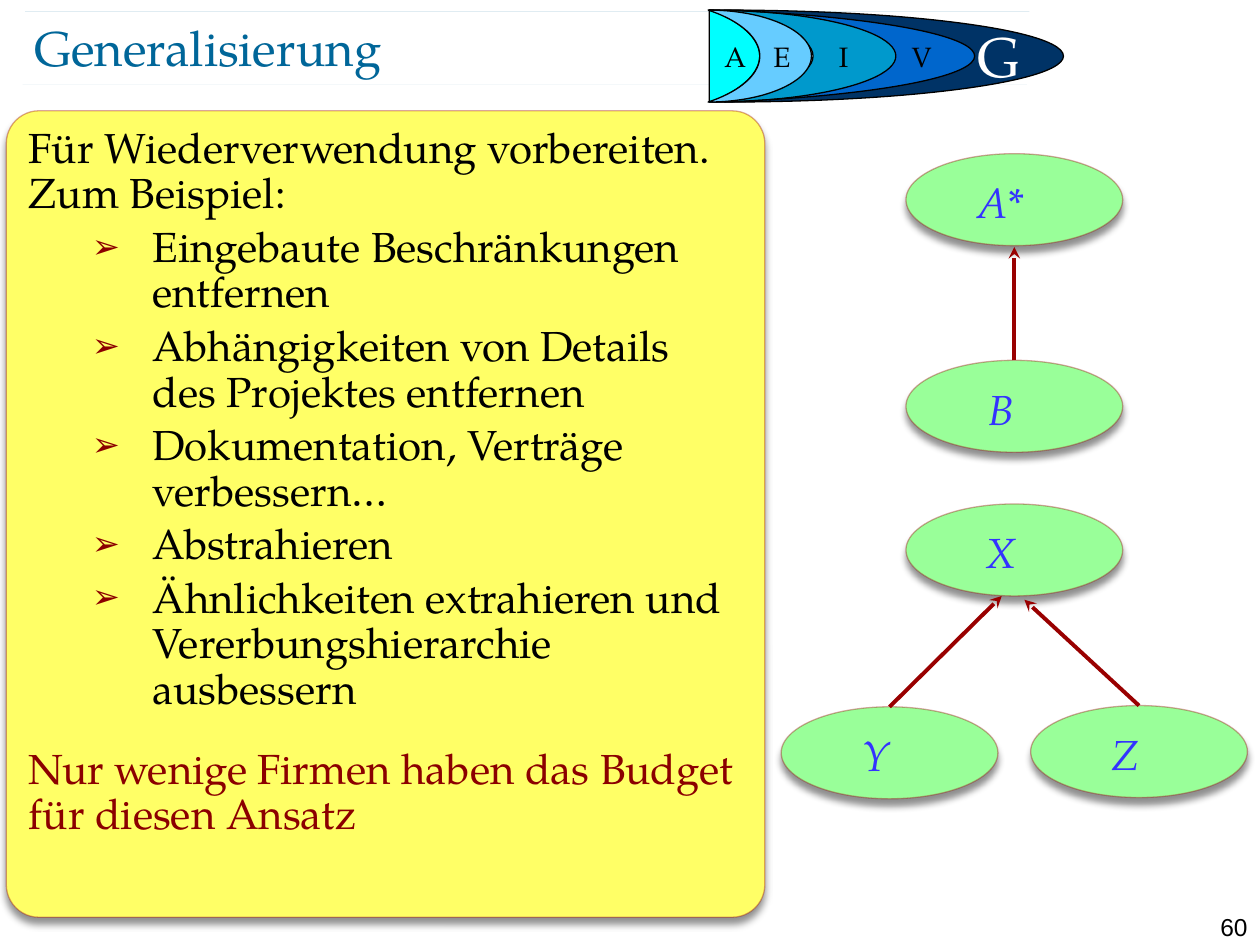
from lxml.etree import SubElement
from pptx import Presentation
from pptx.dml.color import RGBColor
from pptx.enum.shapes import MSO_CONNECTOR, MSO_SHAPE
from pptx.enum.text import MSO_ANCHOR, MSO_AUTO_SIZE, PP_ALIGN
from pptx.oxml.ns import qn
from pptx.util import Inches, Pt

TEAL = RGBColor(0x00, 0x66, 0x99)
RED = RGBColor(0x99, 0x00, 0x00)
DARK_RED = RGBColor(0x8B, 0x00, 0x00)
YELLOW = RGBColor(0xFF, 0xFF, 0x66)
GREEN = RGBColor(0x99, 0xFF, 0x99)
VIOLET = RGBColor(0x33, 0x33, 0xFF)
BLACK = RGBColor(0x00, 0x00, 0x00)
WHITE = RGBColor(0xFF, 0xFF, 0xFF)
CYAN = RGBColor(0x00, 0xFF, 0xFF)
SKY = RGBColor(0x66, 0xCC, 0xFF)
AZURE = RGBColor(0x00, 0x99, 0xCC)
BLUE = RGBColor(0x00, 0x66, 0xCC)
NAVY = RGBColor(0x00, 0x33, 0x66)

ITEMS = [
    "Eingebaute Beschränkungen entfernen",
    "Abhängigkeiten von Details des Projektes entfernen",
    "Dokumentation, Verträge verbessern…",
    "Abstrahieren",
    "Ähnlichkeiten extrahieren und Vererbungshierarchie ausbessern",
]


def add_xml(parent, tag, **attrs):
    return SubElement(parent, qn(tag), {k: str(v) for k, v in attrs.items()})


class SlideBuilder:
    font = "TeX Gyre Pagella"

    def __init__(self, slide):
        self.s = slide

    def add_text(self, p, text, color=BLACK, **fmt):
        r = p.add_run()
        r.text = text
        for name, value in {"name": self.font, **fmt}.items():
            setattr(r.font, name, value)
        r.font.color.rgb = color

    def frame(self, sp, **fmt):
        tf = sp.text_frame
        defaults = {"word_wrap": True, "auto_size": MSO_AUTO_SIZE.NONE,
                    "margin_left": 0, "margin_right": 0,
                    "margin_top": 0, "margin_bottom": 0,
                    "vertical_anchor": MSO_ANCHOR.MIDDLE}
        for name, value in {**defaults, **fmt}.items():
            setattr(tf, name, value)
        return tf

    def place(self, sp, x, y, w, h):
        box = {"left": x, "top": y, "width": w, "height": h}
        for name, value in box.items():
            setattr(sp, name, Inches(value))

    def label(self, text, x, y, w, h, color=BLACK, align=PP_ALIGN.CENTER,
              frame=None, **fmt):
        sp = self.s.shapes.add_textbox(Inches(x), Inches(y), Inches(w), Inches(h))
        p = self.frame(sp, **(frame or {})).paragraphs[0]
        p.alignment = align
        self.add_text(p, text, color, **fmt)

    def paint(self, sp, fill, line=BLACK):
        sp.shadow.inherit = False
        sp.fill.solid()
        sp.fill.fore_color.rgb = fill
        sp.line.color.rgb = line
        sp.line.width = Pt(0.75)

    def fade_line(self, sp, percent):
        clr = sp.line._get_or_add_ln().find(".//" + qn("a:srgbClr"))
        add_xml(clr, "a:alpha", val=percent * 1000)

    def shape(self, kind, x, y, w, h, fill, adj=None, line=BLACK):
        sp = self.s.shapes.add_shape(kind, Inches(x), Inches(y), Inches(w), Inches(h))
        if adj is not None:
            sp.adjustments[0] = adj
        self.paint(sp, fill, line)
        return sp

    def raised(self, *args, **kwargs):
        """Shape with a faint red outline and a soft shadow below."""
        sp = self.shape(*args, line=RED, **kwargs)
        self.fade_line(sp, 34)
        effects = sp._element.spPr.find(qn("a:effectLst"))
        shadow = add_xml(effects, "a:outerShdw", blurRad=Pt(4), dist=Pt(4),
                         dir=90 * 60000, algn="ctr", rotWithShape=0)
        clr = add_xml(shadow, "a:srgbClr", val=BLACK)
        add_xml(clr, "a:alpha", val=43000)
        return sp

    def node(self, name, x, y):
        sp = self.raised(MSO_SHAPE.OVAL, x, y, 1.72, 0.73, GREEN)
        self.label(name, x + 0.31, y + 0.14, 0.89, 0.48, VIOLET,
                   size=Pt(24), italic=True)
        return sp

    def moon(self, x, w, adj, fill):
        self.shape(MSO_SHAPE.MOON, x, 0.08, w, 0.73, fill, adj).rotation = 180

    def dome(self, x, y, w, h, fill, steps=32):
        ts = [2 * i / steps - 1 for i in range(steps + 1)]
        points = [(Inches(x + w * (1 - t * t) ** 0.85),
                   Inches(y + h * (t + 1) / 2)) for t in ts]
        builder = self.s.shapes.build_freeform(*points[0])
        builder.add_line_segments(points[1:], close=True)
        self.paint(builder.convert_to_shape(), fill)

    def line(self, x1, y1, x2, y2, color, width):
        c = self.s.shapes.add_connector(MSO_CONNECTOR.STRAIGHT, Inches(x1),
                                        Inches(y1), Inches(x2), Inches(y2))
        c.line.color.rgb = color
        c.line.width = Pt(width)
        add_xml(c._element.spPr, "a:effectLst")
        return c

    def arrow(self, child, x, y):
        c = self.line(x, y, x, y, RED, 2.25)
        c.begin_connect(child, 0)
        c.end_x, c.end_y = Inches(x), Inches(y)
        add_xml(c.line._get_or_add_ln(), "a:tailEnd", type="stealth")

    def title(self, text):
        sp = self.s.shapes.title
        self.place(sp, 0.27, 0.13, 8.69, 0.48)
        p = self.frame(sp).paragraphs[0]
        p.alignment = PP_ALIGN.LEFT
        self.add_text(p, text, TEAL, size=Pt(28))

    def paragraph(self, p, text, color=BLACK, bullet=False, before=4.8):
        pPr = p._p.get_or_add_pPr()
        margin, indent = (0.98, -0.48) if bullet else (0, 0)
        pPr.set("marL", str(Inches(margin)))
        pPr.set("indent", str(Inches(indent)))
        if bullet:
            p.level = 1
            add_xml(add_xml(pPr, "a:buClr"), "a:srgbClr", val=DARK_RED)
            add_xml(pPr, "a:buSzPct", val=80000)
            add_xml(pPr, "a:buChar", char="➢")
        else:
            add_xml(pPr, "a:buNone")
        p.line_spacing = 0.9
        p.space_before = Pt(before)
        self.add_text(p, text, color, size=Pt(24))

    def body(self, intro, items, closing):
        panel = self.raised(MSO_SHAPE.ROUNDED_RECTANGLE, 0.05, 0.88, 6.02, 6.4,
                            YELLOW, adj=0.043)
        self.s.shapes._spTree.insert(2, panel._element)  # behind the list
        sp = self.s.placeholders[1]
        self.place(sp, 0.23, 1.01, 5.66, 6.14)
        tf = self.frame(sp, vertical_anchor=MSO_ANCHOR.TOP)
        self.paragraph(tf.paragraphs[0], intro, before=0)
        for item in items:
            self.paragraph(tf.add_paragraph(), item, bullet=True)
        self.paragraph(tf.add_paragraph(), closing, DARK_RED, before=20)


def main():
    prs = Presentation()
    prs.slide_width, prs.slide_height = Inches(10), Inches(7.5)
    b = SlideBuilder(prs.slides.add_slide(prs.slide_layouts[1]))

    # Title between two hairlines, page number
    for x, y in [(0.18, 0.67), (0.2, 0.09)]:
        b.fade_line(b.line(x, y, x + 7.97, y, TEAL, 0.1), 35)
    b.title("Generalisierung")
    b.label("60", 9.45, 7.16, 0.55, 0.24, align=PP_ALIGN.RIGHT, name="Arial",
            size=Pt(14), frame={"margin_right": Inches(0.1), "margin_top": Inches(0.08),
                                "vertical_anchor": MSO_ANCHOR.TOP})

    # List panel
    b.body("Für Wiederverwendung vorbereiten. Zum Beispiel:", ITEMS,
           "Nur wenige Firmen haben das Budget für diesen Ansatz")

    # Inheritance diagrams
    b.node("A*", 7.19, 1.22)
    b.node("X", 7.19, 4)
    node_b = b.node("B", 7.19, 2.86)
    node_y = b.node("Y", 6.2, 5.61)
    node_z = b.node("Z", 8.18, 5.6)
    for child, x, y in [(node_b, 8.05, 1.96), (node_y, 7.95, 4.73),
                        (node_z, 8.13, 4.76)]:
        b.arrow(child, x, y)

    # Phase emblem
    b.moon(5.63, 2.11, 0.302, BLUE)
    b.dome(5.63, 0.08, 0.4, 0.73, CYAN)
    for x, w, adj, fill in [(5.63, 1.48, 0.444, AZURE), (5.62, 0.82, 0.5, SKY),
                            (5.75, 2.69, 0.262, NAVY)]:
        b.moon(x, w, adj, fill)
    for letter, x, w in [("A", 5.54, 0.59), ("E", 5.91, 0.59),
                         ("I", 6.4, 0.59), ("V", 7.16, 0.31)]:
        b.label(letter, x, 0.26, w, 0.37, size=Pt(16))
    b.label("G", 7.66, 0.12, 0.53, 0.63, WHITE, size=Pt(32))

    prs.save("out.pptx")


if __name__ == "__main__":
    main()
